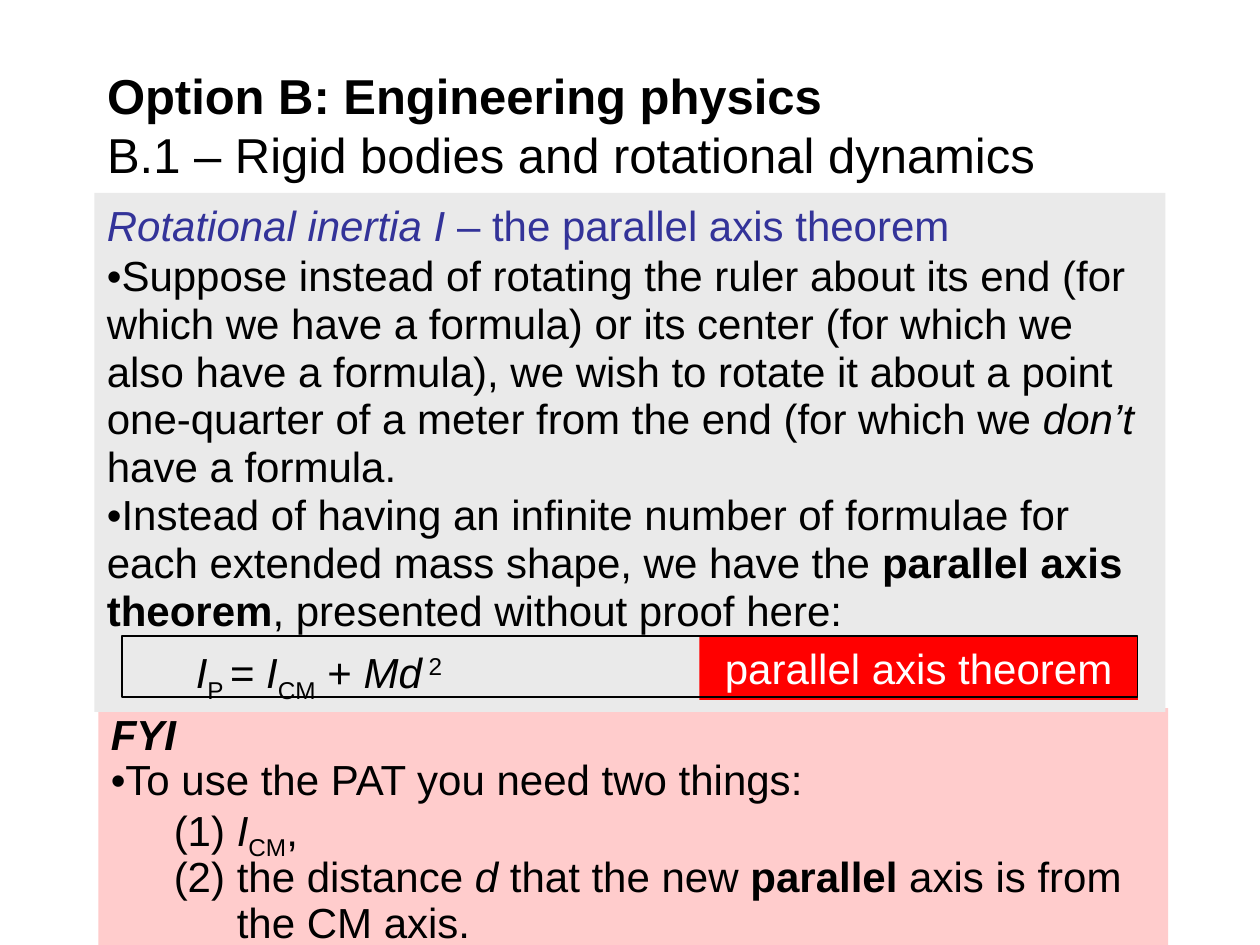
from copy import deepcopy

from pptx import Presentation
from pptx.dml.color import RGBColor
from pptx.enum.shapes import MSO_SHAPE
from pptx.enum.text import MSO_ANCHOR, PP_ALIGN
from pptx.util import Pt

COLORS = {
    "black": "000000", "white": "FFFFFF", "heading": "333399",
    "panel": "EAEAEA", "note": "FFCCCC", "label": "FF0000",
}
FONT = "Arial"


def color(name):
    return RGBColor.from_string(COLORS[name])


def write(para, text, size=24, ink="black", bold=False, italic=False, baseline=0):
    """Add a formatted span; a newline in the text becomes a line break."""
    for number, part in enumerate(text.split("\n")):
        if number:
            para.add_line_break()
        span = para.add_run()
        span.text = part
        span.font.name, span.font.size = FONT, Pt(size)
        span.font.bold, span.font.italic = bold, italic
        span.font.color.rgb = color(ink)
        properties = span.font._element
        if baseline:
            properties.set("baseline", str(baseline * 1000))
        if number:
            # The break takes the size of its text
            span._r.getprevious().append(deepcopy(properties))


class SlideBuilder:
    def __init__(self, slide):
        self.slide = slide

    def title(self, place, spans):
        box = self.slide.shapes.title
        box.left, box.top, box.width, box.height = map(Pt, place)
        self.text(box, [dict(spans=spans)], MSO_ANCHOR.MIDDLE)

    def panel(self, place, fill=None, line=None, parent=None):
        shapes = (parent or self.slide).shapes
        box = shapes.add_shape(MSO_SHAPE.RECTANGLE, *map(Pt, place))
        box.shadow.inherit = False
        if fill:
            box.fill.solid()
            box.fill.fore_color.rgb = color(fill)
        else:
            box.fill.background()
        if line:
            box.line.color.rgb = color(line)
            box.line.width = Pt(1)
        else:
            box.line.fill.background()
        return box

    def text_box(self, place, parent=None):
        return (parent or self.slide).shapes.add_textbox(*map(Pt, place))

    def text(self, box, paragraphs, anchor=MSO_ANCHOR.TOP):
        frame = box.text_frame
        frame.word_wrap = True
        frame.vertical_anchor = anchor
        frame.margin_left = frame.margin_right = Pt(7.2)
        frame.margin_top = frame.margin_bottom = Pt(3.6)
        for number, item in enumerate(paragraphs):
            para = frame.add_paragraph() if number else frame.paragraphs[0]
            para.alignment = item.get("align", PP_ALIGN.LEFT)
            para.line_spacing = item.get("spacing", 1.0)
            para.space_before = Pt(0)
            para.space_after = Pt(item.get("after", 0))
            properties = para._p.get_or_add_pPr()
            properties.set("marL", str(Pt(item.get("margin", 0))))
            properties.set("indent", str(Pt(item.get("indent", 0))))
            for text, style in item["spans"]:
                write(para, text, **style)


def main():
    deck = Presentation()
    deck.slide_width, deck.slide_height = Pt(720), Pt(540)
    slide = deck.slides.add_slide(deck.slide_layouts[0])
    subtitle = slide.placeholders[1].element
    subtitle.getparent().remove(subtitle)
    builder = SlideBuilder(slide)

    plain, bold, italic = {}, dict(bold=True), dict(italic=True)
    subscript, superscript = dict(baseline=-25), dict(baseline=30)
    hanging = dict(margin=36, indent=-36, spacing=0.9)

    # Note on using the theorem
    note = builder.panel((56.2, 404.6, 611.3, 135.4), fill="note")
    builder.text(note, [
        dict(spacing=0.9, spans=[("FYI", dict(bold=True, italic=True))]),
        dict(spacing=0.9, spans=[("•To use the PAT you need two things:", plain)]),
        dict(hanging, spans=[("\t(1) ", plain), ("I", italic),
                             ("CM", subscript), (",", plain)]),
        dict(hanging, spans=[("\t(2) the distance ", plain), ("d", italic),
                             (" that the new ", plain), ("parallel", bold),
                             (" axis is from\n\tthe CM axis.", plain)]),
    ])

    # Title
    builder.title((54, 36, 612, 70.6), [
        ("Option B: Engineering physics", dict(size=28, bold=True)),
        ("\nB.1 – Rigid bodies and rotational dynamics", dict(size=28)),
    ])

    # Main explanation
    body = builder.panel((54, 110.2, 612, 296.6), fill="panel")
    builder.text(body, [
        dict(after=2, spans=[
            ("Rotational inertia I ", dict(ink="heading", italic=True)),
            ("– the parallel axis theorem", dict(ink="heading"))]),
        dict(spacing=0.95, spans=[
            ("•Suppose instead of rotating the ruler about its end (for which we "
             "have a formula) or its center (for which we also have a formula), "
             "we wish to rotate it about a point one-quarter of a meter from the "
             "end (for which we ", plain),
            ("don’t", italic), (" have a formula.", plain)]),
        dict(spacing=0.95, spans=[
            ("•Instead of having an infinite number of formulae for each extended "
             "mass shape, we have the ", plain),
            ("parallel axis theorem", bold),
            (", presented without proof here:", plain)]),
    ])

    # Formula with its label and frame
    formula = slide.shapes.add_group_shape()
    label = builder.panel((399.6, 363.6, 250.6, 36.4), fill="label", parent=formula)
    builder.text(label, [dict(align=PP_ALIGN.CENTER, spans=[
        ("parallel axis theorem", dict(ink="white"))])])
    builder.panel((69.8, 363.6, 580.3, 34.6), line="black", parent=formula)
    equation = builder.text_box((91.4, 366.3, 452.9, 34.6), parent=formula)
    builder.text(equation, [dict(margin=13.4, spacing=0.9, spans=[
        ("I", italic), ("P ", subscript), ("= ", plain), ("I", italic),
        ("CM", subscript), (" + ", plain), ("Md", italic), (" 2", superscript)])])

    deck.save("out.pptx")


if __name__ == "__main__":
    main()
